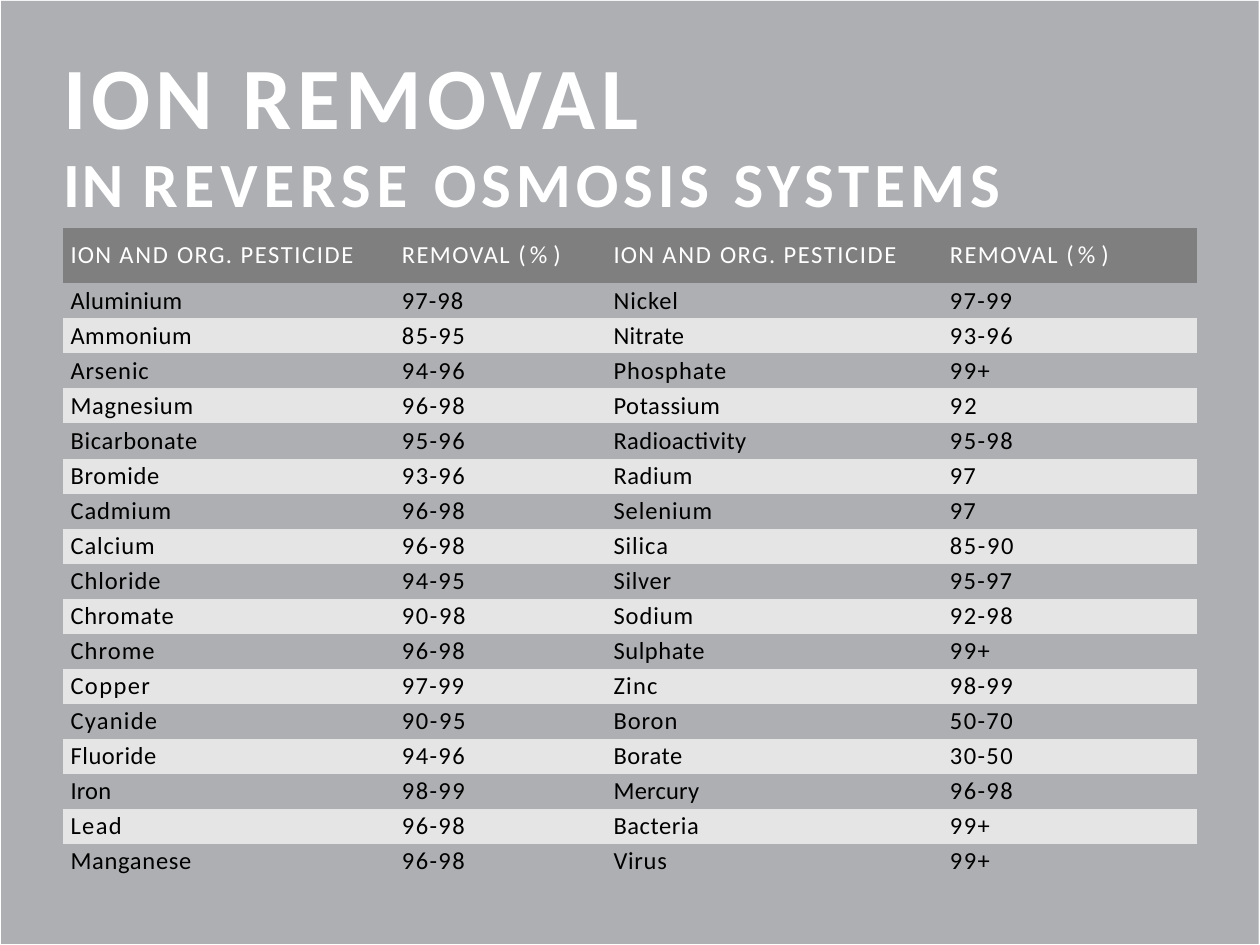
from pptx import Presentation
from pptx.dml.color import RGBColor as Rgb
from pptx.enum.shapes import MSO_SHAPE as Shape
from pptx.enum.text import MSO_ANCHOR as Anchor, MSO_AUTO_SIZE as Fit, PP_ALIGN as Align
from pptx.util import Inches, Pt

WIDE, HIGH = Inches(10), Inches(7.5)
GREY, PALE, DARK, WHITE, BLACK = "ADAFB2", "E5E5E5", "7F7F7F", "FFFFFF", "000000"
NO_GRID = "{2D5ABB26-0587-4C30-8999-92F81FD0307C}"

TITLE = [
    (50, 58.6, 1, [("ION ", 2.8), ("REMOVAL", 3.1)]),
    (36, 41.8, 0, [("IN ", 1.3), ("REVERSE ", 3.4), ("OSMOSIS ", 2.8), ("SYSTEMS", 2.9)]),
]
ION = [("ION ", 0.7), ("AND ", 1), ("ORG. ", 0.8), ("PESTICIDE", 0.9)]
RATE = [("REMOVAL ", 0.8), ("( ", -0.8), ("% ", 0.1), (")", -0.8)]
COLS = [2.5, 1.66, 2.67, 2.17]
INDENTS = [0.06, 0.19, 0.21, 0.21]
HEAD = 0.085
DATA = [
    ("Aluminium", 0.2, "97-98", 0.6, "Nickel", 0.5, "97-99", 0.7),
    ("Ammonium", 0.3, "85-95", 0.8, "Nitrate", 0.1, "93-96", 0.8),
    ("Arsenic", 0.5, "94-96", 0.8, "Phosphate", 0.5, "99+", 0.8),
    ("Magnesium", 0.4, "96-98", 0.8, "Potassium", 0.3, "92", 1.1),
    ("Bicarbonate", 0.4, "95-96", 0.8, "Radioactivity", 0.2, "95-98", 0.8),
    ("Bromide", 0.4, "93-96", 0.8, "Radium", 0.3, "97", 0.6),
    ("Cadmium", 0.5, "96-98", 0.8, "Selenium", 0.5, "97", 0.6),
    ("Calcium", 0.5, "96-98", 0.8, "Silica", 0.5, "85-90", 0.9),
    ("Chloride", 0.5, "94-95", 0.8, "Silver", 0.4, "95-97", 0.7),
    ("Chromate", 0.4, "90-98", 0.9, "Sodium", 0.5, "92-98", 0.8),
    ("Chrome", 0.6, "96-98", 0.8, "Sulphate", 0.3, "99+", 0.8),
    ("Copper", 0.8, "97-99", 0.7, "Zinc", 0.7, "98-99", 0.8),
    ("Cyanide", 0.7, "90-95", 0.9, "Boron", 0.5, "50-70", 0.8),
    ("Fluoride", 0.3, "94-96", 0.8, "Borate", 0.3, "30-50", 0.8),
    ("Iron", 0.1, "98-99", 0.8, "Mercury", 0.1, "96-98", 0.8),
    ("Lead", 0.8, "96-98", 0.8, "Bacteria", 0.3, "99+", 0.8),
    ("Manganese", 0.4, "96-98", 0.8, "Virus", 0.4, "99+", 0.8),
]


def tint(code):
    """Turn a hex string into a colour."""
    return Rgb.from_string(code)


def share(left, top, wide, high):
    """Turn percentages of the slide into a box."""
    return [int(part * full / 100) for part, full in
            zip((left, top, wide, high), (WIDE, HIGH, WIDE, HIGH))]


def style(item, **values):
    """Set attributes from format values."""
    for name, value in values.items():
        setattr(item, name, value)


def write(para, runs, size, code, indent, bold=False, **form):
    """Fill a paragraph with letter-spaced runs."""
    style(para, alignment=Align.LEFT, **form)
    props = para._p.get_or_add_pPr()
    props.set("marL", str(Inches(indent)))
    props.set("indent", "0")
    for text, gap in runs:
        run = para.add_run()
        style(run, text=text)
        style(run.font, name="Calibri", size=Pt(size), bold=bold)
        run.font.color.rgb = tint(code)
        run.font._element.set("spc", str(round(gap * 100)))


def back(slide, box):
    """Lay the grey panel behind everything."""
    panel = slide.shapes.add_shape(Shape.RECTANGLE, *box)
    panel.shadow.inherit = False
    panel.fill.solid()
    panel.fill.fore_color.rgb = tint(GREY)
    panel.line.fill.background()
    slide.shapes._spTree.insert(2, panel._element)


def title(slide, box):
    """Place the two-line title."""
    head = slide.shapes.title
    style(head, **dict(zip(("left", "top", "width", "height"), box)))
    frame = head.text_frame
    style(frame, margin_left=0, margin_top=Inches(0.01), margin_right=0, margin_bottom=0,
          vertical_anchor=Anchor.TOP, word_wrap=True, auto_size=Fit.SHAPE_TO_FIT_TEXT)
    for row, (size, line, above, runs) in enumerate(TITLE):
        para = frame.add_paragraph() if row else frame.paragraphs[0]
        write(para, runs, size, WHITE, 0.01, True, line_spacing=Pt(line), space_before=Pt(above))


def cell_fill(cell, runs, code, ink, indent, inset, above):
    """Paint one cell and write its text."""
    cell.fill.solid()
    cell.fill.fore_color.rgb = tint(code)
    style(cell, margin_left=0, margin_right=0, margin_bottom=0, margin_top=Inches(inset),
          vertical_anchor=Anchor.TOP)
    write(cell.text_frame.paragraphs[0], runs, 14, ink, indent, space_before=Pt(above))


def rates(slide, box):
    """Build the banded table of removal rates."""
    wide, high = box[2:]
    grid = slide.shapes.add_table(len(DATA) + 1, len(COLS), *box).table
    grid._tbl.tblPr.find("{*}tableStyleId").text = NO_GRID
    for col, part in zip(grid.columns, COLS):
        col.width = int(wide * part / sum(COLS))
    for row, line in enumerate(grid.rows):
        line.height = int(high * (1 - HEAD) / len(DATA)) if row else int(high * HEAD)
    for col, (runs, indent) in enumerate(zip([ION, RATE] * 2, INDENTS)):
        cell_fill(grid.cell(0, col), runs, DARK, WHITE, indent, 0.1, 7.2)
        for row, data in enumerate(DATA, 1):
            pair = data[2 * col:2 * col + 2]
            band = GREY if row % 2 else PALE
            cell_fill(grid.cell(row, col), [pair], band, BLACK, indent, 0.02, 1.6)


def main():
    """Build and save the slide."""
    deck = Presentation()
    style(deck, slide_width=WIDE, slide_height=HIGH)
    slide = deck.slides.add_slide(deck.slide_layouts[5])
    back(slide, share(0.1, 0.1, 99.8, 99.8))
    title(slide, share(4.9, 4.53, 75.1, 19.07))
    rates(slide, share(5, 24.13, 90, 68.93))
    deck.save("out.pptx")


if __name__ == "__main__":
    main()
